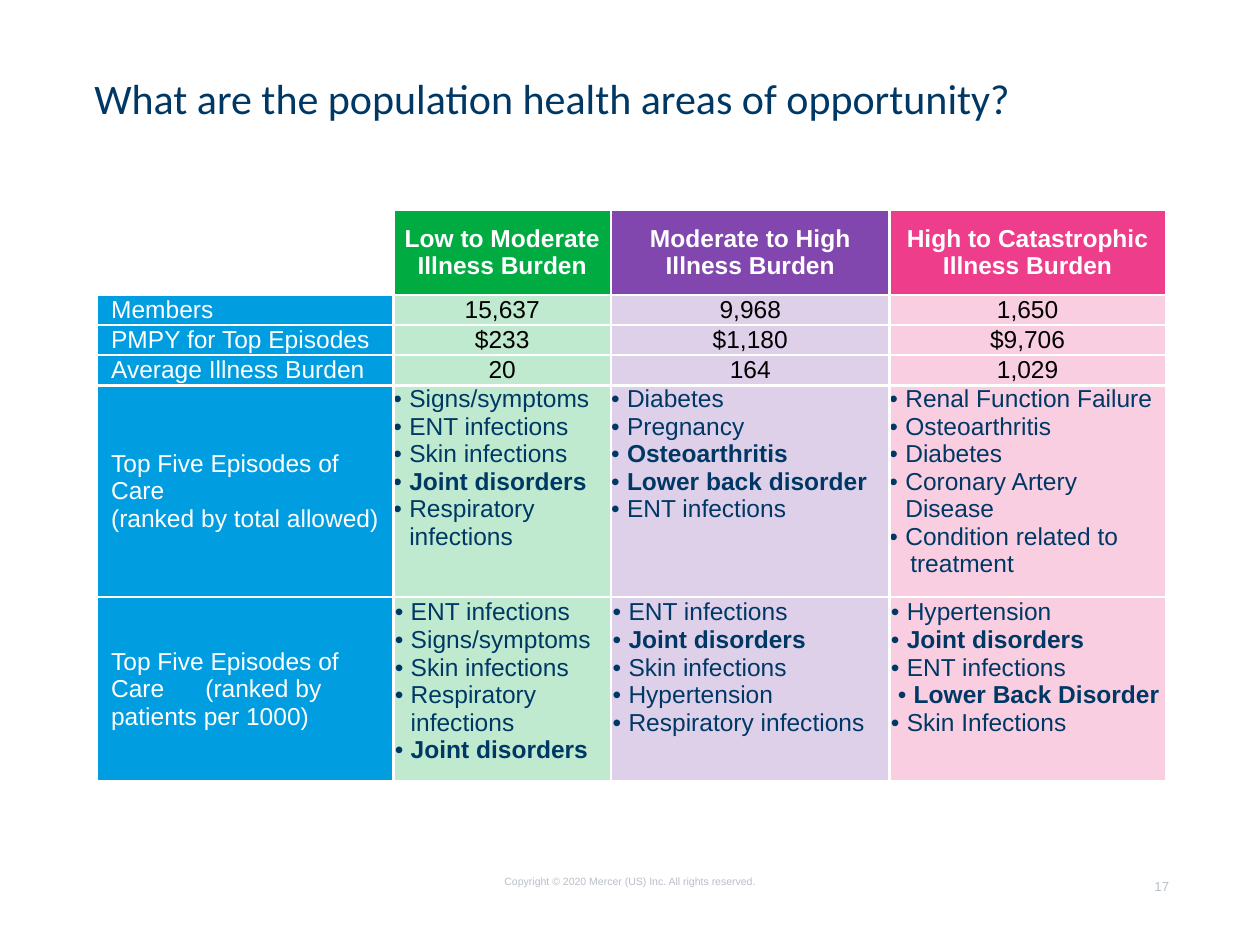
"""Build the slide on population health areas of opportunity."""
from dataclasses import dataclass

from lxml.etree import SubElement
from pptx import Presentation
from pptx.dml.color import RGBColor
from pptx.enum.text import MSO_ANCHOR, MSO_AUTO_SIZE, PP_ALIGN
from pptx.oxml.ns import qn
from pptx.util import Cm, Pt

LEFT, CENTER, RIGHT = PP_ALIGN.LEFT, PP_ALIGN.CENTER, PP_ALIGN.RIGHT
TOP, MIDDLE = MSO_ANCHOR.TOP, MSO_ANCHOR.MIDDLE
NO_FIT = MSO_AUTO_SIZE.NONE
TITLE_ONLY = 5

COLORS = {
    "navy": "003865", "white": "FFFFFF", "black": "000000", "gray": "B9BFC7",
    "blue": "009DE0", "green": "00AC41", "purple": "8246AF", "pink": "EE3D8B",
}
NO_MARGINS = dict.fromkeys(
    ("margin_left", "margin_top", "margin_right", "margin_bottom"), 0)
HANG = 0.32


@dataclass(frozen=True)
class Style:
    size: float
    color: str
    name: str = "Arial"
    bold: bool = False


@dataclass(frozen=True)
class Item:
    text: str
    bold: bool = False
    bullet: bool = True
    shift: float = 0


@dataclass(frozen=True)
class Burden:
    heading: str
    color: str
    figures: tuple[str, str, str]
    by_allowed: tuple[Item, ...]
    by_patients: tuple[Item, ...]


@dataclass(frozen=True)
class Note:
    text: str
    left: float
    top: float
    width: float
    align: PP_ALIGN
    size: float
    wrap: bool


HEADING = Style(14, "white", bold=True)
LABEL = Style(14, "white")
FIGURE = Style(14, "black")

LABELS = (
    "Members", "PMPY for Top Episodes", "Average Illness Burden",
    "Top Five Episodes of Care\n(ranked by total allowed)",
    "Top Five Episodes of Care\t(ranked by patients per 1000)",
)
BURDENS = (
    Burden(
        "Low to Moderate\nIllness Burden", "green", ("15,637", "$233", "20"),
        (Item("Signs/symptoms"), Item("ENT infections"), Item("Skin infections"),
         Item("Joint disorders", bold=True), Item("Respiratory infections")),
        (Item("ENT infections"), Item("Signs/symptoms"), Item("Skin infections"),
         Item("Respiratory infections"), Item("Joint disorders", bold=True))),
    Burden(
        "Moderate to High\nIllness Burden", "purple", ("9,968", "$1,180", "164"),
        (Item("Diabetes"), Item("Pregnancy"), Item("Osteoarthritis", bold=True),
         Item("Lower back disorder", bold=True), Item("ENT infections")),
        (Item("ENT infections"), Item("Joint disorders", bold=True),
         Item("Skin infections"), Item("Hypertension"),
         Item("Respiratory infections"))),
    Burden(
        "High to Catastrophic\nIllness Burden", "pink", ("1,650", "$9,706", "1,029"),
        (Item("Renal Function Failure"), Item("Osteoarthritis"), Item("Diabetes"),
         Item("Coronary Artery Disease"), Item("Condition related to"),
         Item("treatment", bullet=False, shift=0.1)),
        (Item("Hypertension"), Item("Joint disorders", bold=True),
         Item("ENT infections"),
         Item("Lower Back Disorder", bold=True, shift=0.14),
         Item("Skin Infections"))),
)
NOTES = (
    Note("Copyright © 2020 Mercer (US) Inc. All rights reserved.",
         8.33, 17.63, 8.74, CENTER, 6, False),
    Note("17", 22.15, 17.7, 1.42, RIGHT, 7.5, True),
)
COLUMN_WIDTHS = (5.97, 4.39, 5.61, 5.57)
ROW_HEIGHTS = (1.7, 0.61, 0.61, 0.61, 4.27, 3.71)


def apply_format(target, values: dict) -> None:
    """Set each named attribute on the target."""
    for name, value in values.items():
        setattr(target, name, value)


def rgb(color: str) -> RGBColor:
    """Look up a palette colour."""
    return RGBColor.from_string(COLORS[color])


def write(para, text: str, style: Style, align: PP_ALIGN = LEFT) -> None:
    """Fill a paragraph with text in one style."""
    para.text = text
    para.alignment = align
    for span in para.runs:
        apply_format(span.font, {"name": style.name, "size": Pt(style.size),
                                 "bold": style.bold})
        span.font.color.rgb = rgb(style.color)
    for line_break in para._p.findall(qn("a:br")):
        SubElement(line_break, qn("a:rPr"), sz=str(int(style.size * 100)))


def write_items(cell, items: tuple[Item, ...]) -> None:
    """Write a bulleted list into a cell."""
    frame = cell.text_frame
    for index, item in enumerate(items):
        para = frame.add_paragraph() if index else frame.paragraphs[0]
        write(para, item.text, Style(14, "navy", bold=item.bold))
        properties = para._p.get_or_add_pPr()
        properties.set("marL", str(Cm(HANG + item.shift)))
        properties.set("indent", str(-Cm(HANG) if item.bullet else 0))
        if item.bullet:
            SubElement(properties, qn("a:buFont"), typeface="Arial")
            SubElement(properties, qn("a:buChar"), char="•")
        else:
            SubElement(properties, qn("a:buNone"))


def prepare_cell(cell, color: str = "", alpha: int = 100, inset: float = 0,
                 anchor: MSO_ANCHOR = MIDDLE) -> None:
    """Set margins, white borders and fill of a cell."""
    apply_format(cell, {**NO_MARGINS, "margin_left": Cm(inset),
                        "vertical_anchor": anchor})
    properties = cell._tc.get_or_add_tcPr()
    for side in ("lnL", "lnR", "lnT", "lnB"):
        line = SubElement(properties, qn(f"a:{side}"), w=str(Pt(1.5)))
        fill = SubElement(line, qn("a:solidFill"))
        SubElement(fill, qn("a:srgbClr"), val=COLORS["white"])
    if not color:
        cell.fill.background()
        return
    cell.fill.solid()
    cell.fill.fore_color.rgb = rgb(color)
    if alpha < 100:
        tint = properties.find(f"{qn('a:solidFill')}/{qn('a:srgbClr')}")
        SubElement(tint, qn("a:alpha"), val=str(alpha * 1000))


def add_burden_table(page) -> None:
    """Draw the table of illness burden groups."""
    table = page.shapes.add_table(
        len(ROW_HEIGHTS), len(COLUMN_WIDTHS), Cm(1.96), Cm(4.24),
        Cm(sum(COLUMN_WIDTHS)), Cm(sum(ROW_HEIGHTS))).table
    apply_format(table, {"first_row": False, "horz_banding": False})
    for column, width in zip(table.columns, COLUMN_WIDTHS):
        column.width = Cm(width)
    for row, height in zip(table.rows, ROW_HEIGHTS):
        row.height = Cm(height)
    prepare_cell(table.cell(0, 0))
    for row, label in enumerate(LABELS, 1):
        cell = table.cell(row, 0)
        prepare_cell(cell, "blue", inset=0.28)
        para = cell.text_frame.paragraphs[0]
        write(para, label, LABEL)
        if "\t" in label:
            tabs = SubElement(para._p.get_or_add_pPr(), qn("a:tabLst"))
            SubElement(tabs, qn("a:tab"), pos=str(Cm(1.9)), algn="l")
    for column, burden in enumerate(BURDENS, 1):
        heading = table.cell(0, column)
        prepare_cell(heading, burden.color)
        write(heading.text_frame.paragraphs[0], burden.heading, HEADING, CENTER)
        for row, figure in enumerate(burden.figures, 1):
            cell = table.cell(row, column)
            prepare_cell(cell, burden.color, 25)
            write(cell.text_frame.paragraphs[0], figure, FIGURE, CENTER)
        for row, items in enumerate((burden.by_allowed, burden.by_patients), 4):
            cell = table.cell(row, column)
            inset = 0.03 * (row - 4)
            prepare_cell(cell, burden.color, 25, inset, TOP)
            cell.margin_top = Cm(inset)
            write_items(cell, items)


def add_note(page, note: Note) -> None:
    """Draw a small gray text at the foot of the page."""
    box = page.shapes.add_textbox(
        Cm(note.left), Cm(note.top), Cm(note.width), Cm(0.76))
    apply_format(box.text_frame, {**NO_MARGINS, "word_wrap": note.wrap})
    write(box.text_frame.paragraphs[0], note.text, Style(note.size, "gray"), note.align)


def main() -> None:
    """Assemble and save the deck."""
    deck = Presentation()
    apply_format(deck, {"slide_width": Cm(25.4), "slide_height": Cm(19.05)})
    page = deck.slides.add_slide(deck.slide_layouts[TITLE_ONLY])
    title = page.shapes.title
    apply_format(title, {"left": Cm(1.9), "top": Cm(1.57),
                         "width": Cm(21.06), "height": Cm(2.64)})
    apply_format(title.text_frame, {**NO_MARGINS, "vertical_anchor": TOP,
                                    "word_wrap": True, "auto_size": NO_FIT})
    para = title.text_frame.paragraphs[0]
    write(para, "What are the population health areas of opportunity?",
          Style(24, "navy", "Calibri"))
    para.line_spacing = 0.9
    add_burden_table(page)
    for note in NOTES:
        add_note(page, note)
    deck.save("out.pptx")


if __name__ == "__main__":
    main()
